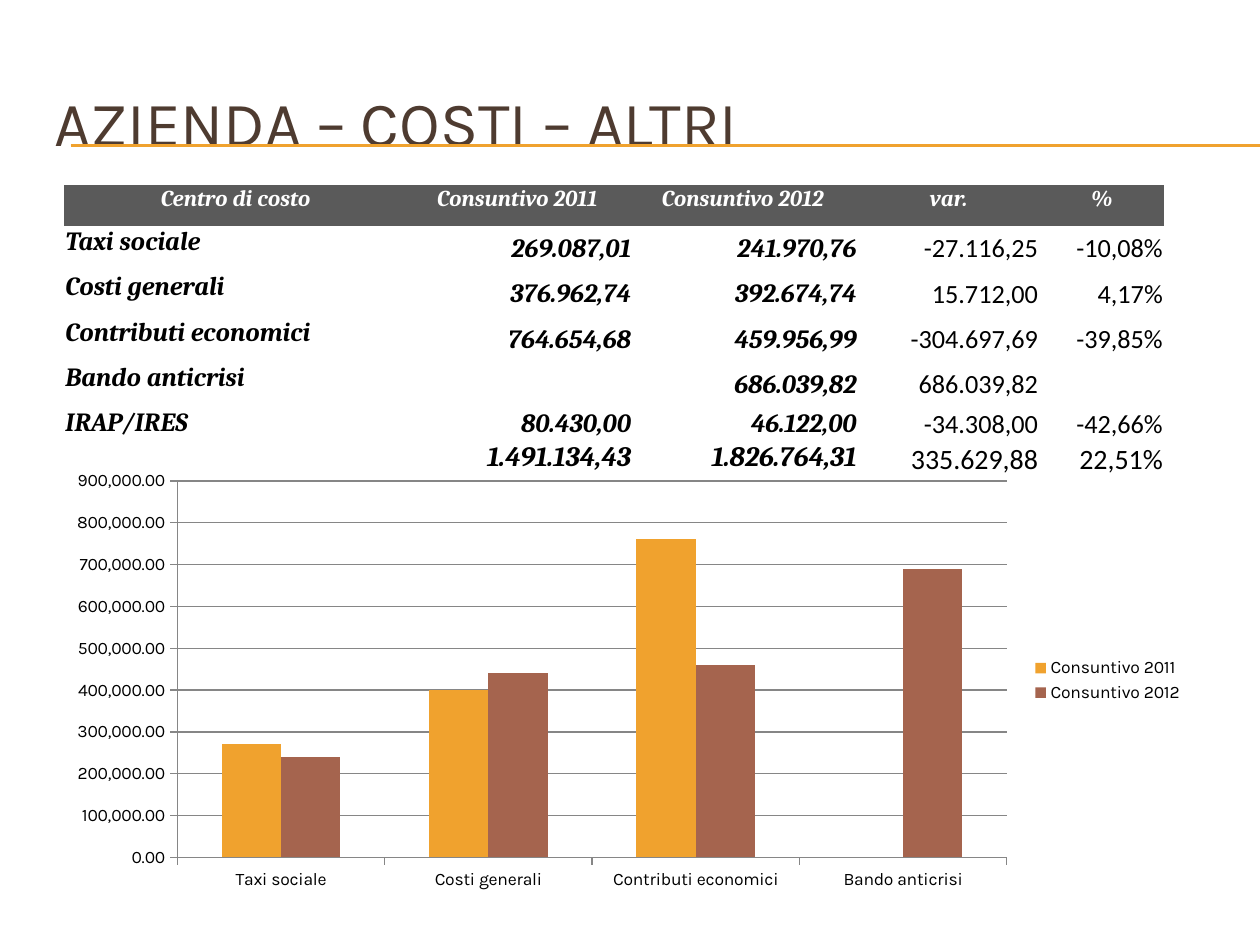
import pptx
import pptx.chart.data
import pptx.dml.color
import pptx.enum.chart
import pptx.enum.text
import pptx.util
from lxml import etree
from pptx.oxml.ns import qn

Inches, Pt = pptx.util.Inches, pptx.util.Pt
ALIGN = pptx.enum.text.PP_ALIGN
ANCHOR = pptx.enum.text.MSO_ANCHOR
ORANGE, RUST, AXIS_GREY = "F0A22E", "A5644E", "868686"

COLUMN_WIDTHS = [2.72, 1.79, 1.79, 1.44, 0.99]
ROW_HEIGHTS = [0.32] + [0.36] * 4 + [0.24, 0.26]
COSTS = [
    ["Centro di costo", "Consuntivo 2011 ", "Consuntivo 2012\u00a0", "var.", "%"],
    ["Taxi sociale", "269.087,01", "241.970,76", "-27.116,25", "-10,08%"],
    ["Costi generali", "376.962,74", "392.674,74", "15.712,00", "4,17%"],
    ["Contributi economici", "764.654,68", "459.956,99", "-304.697,69", "-39,85%"],
    ["Bando anticrisi", "", "686.039,82", "686.039,82", ""],
    ["IRAP/IRES", "80.430,00", "46.122,00", "-34.308,00", "-42,66%"],
    ["", "1.491.134,43", "1.826.764,31", "335.629,88", "22,51%"],
]
CHART_CATEGORIES = ["Taxi sociale", "Costi generali", "Contributi economici", "Bando anticrisi"]
CHART_SERIES = [
    ("Consuntivo 2011", [270000, 400000, 760000, None], ORANGE),
    ("Consuntivo 2012", [240000, 440000, 460000, 690000], RUST),
]


def rgb(value):
    return pptx.dml.color.RGBColor.from_string(value)


def write(frame, text, font="Karla", size=12, color="000000", bold=False, italic=False,
          align=ALIGN.LEFT):
    paragraph = frame.paragraphs[0]
    paragraph.alignment = align
    run = paragraph.add_run()
    run.text = text
    run.font.name, run.font.size = font, Pt(size)
    run.font.bold, run.font.italic = bold, italic
    run.font.color.rgb = rgb(color)


def add_title_rules(slide, left, right, tops):
    for top in tops:
        rule = slide.shapes.add_connector(1, Inches(left), Inches(top), Inches(right), Inches(top))
        rule.line.color.rgb = rgb(ORANGE)
        rule.line.width = Pt(0.75)
        etree.SubElement(rule._element.spPr, qn("a:effectLst"))


def add_title(slide, left, top, width, height):
    title = slide.shapes.title
    title.left, title.top, title.width, title.height = map(Inches, (left, top, width, height))
    title.text_frame.vertical_anchor = ANCHOR.MIDDLE
    write(title.text_frame, "AZIENDA – COSTI – ALTRI", size=36, color="4E3B30")


def cell_format(row, column):
    """Return the text format and the anchor for a place in the cost table."""
    if row == 0:
        return dict(font="Cambria", size=13, color="FFFFFF", bold=True, italic=True,
                    align=ALIGN.CENTER), ANCHOR.TOP
    is_total = row == len(COSTS) - 1
    is_variation = column > 2
    style = dict(font="Calibri" if is_variation else "Cambria", size=16 if is_total else 15,
                 bold=not is_variation, italic=not is_variation,
                 align=ALIGN.RIGHT if column else ALIGN.LEFT)
    if is_total:
        return style, ANCHOR.BOTTOM if is_variation else ANCHOR.TOP
    return style, ANCHOR.MIDDLE if column else ANCHOR.TOP


def add_cost_table(slide, left, top):
    costs = slide.shapes.add_table(
        len(COSTS), len(COLUMN_WIDTHS), Inches(left), Inches(top),
        Inches(sum(COLUMN_WIDTHS)), Inches(sum(ROW_HEIGHTS))).table
    costs.horz_banding = False
    for column, width in zip(costs.columns, COLUMN_WIDTHS):
        column.width = Inches(width)
    for r, (row, height) in enumerate(zip(COSTS, ROW_HEIGHTS)):
        costs.rows[r].height = Inches(height)
        for c, text in enumerate(row):
            cell = costs.cell(r, c)
            cell.margin_left = cell.margin_right = cell.margin_top = Inches(0.01)
            cell.margin_bottom = 0
            style, cell.vertical_anchor = cell_format(r, c)
            write(cell.text_frame, text, **style)
            if r == 0:
                cell.fill.solid()
                cell.fill.fore_color.rgb = rgb("5A5A5A")
            else:
                cell.fill.background()
    # The plain "No Style, No Grid" table style has no borders.
    style_id = costs._tbl.tblPr.find(qn("a:tableStyleId"))
    style_id.text = "{2D5ABB26-0587-4C30-8999-92F81FD0307C}"


def add_cost_chart(slide, left, top, width, height):
    data = pptx.chart.data.CategoryChartData(number_format="#,##0.00")
    data.categories = CHART_CATEGORIES
    for name, values, _ in CHART_SERIES:
        data.add_series(name, values)
    chart = slide.shapes.add_chart(
        pptx.enum.chart.XL_CHART_TYPE.COLUMN_CLUSTERED,
        Inches(left), Inches(top), Inches(width), Inches(height), data).chart
    chart.has_title = False
    chart.font.name, chart.font.size = "Karla", Pt(10)
    chart.font.color.rgb = rgb("000000")
    chart.has_legend = True
    chart.legend.position = pptx.enum.chart.XL_LEGEND_POSITION.RIGHT
    chart.legend.include_in_layout = False

    columns = chart.plots[0]
    columns.gap_width, columns.overlap = 150, 0
    columns.vary_by_categories = False
    for series, (_, _, color) in zip(columns.series, CHART_SERIES):
        series.format.fill.solid()
        series.format.fill.fore_color.rgb = rgb(color)

    amounts = chart.value_axis
    amounts.minimum_scale, amounts.maximum_scale, amounts.major_unit = 0, 900000, 100000
    amounts.tick_labels.number_format = "#,##0.00"
    amounts.tick_labels.number_format_is_linked = False
    amounts.has_major_gridlines = True
    for part in (amounts, chart.category_axis, amounts.major_gridlines):
        part.format.line.color.rgb = rgb(AXIS_GREY)
        part.format.line.width = Pt(0.75)
    for axis in (amounts, chart.category_axis):
        axis.major_tick_mark = pptx.enum.chart.XL_TICK_MARK.OUTSIDE


def main():
    deck = pptx.Presentation()
    deck.slide_width, deck.slide_height = Inches(10), Inches(7.5)
    slide = deck.slides.add_slide(deck.slide_layouts[5])
    add_title_rules(slide, 0.56, 10, (1.15, 1.16))
    add_title(slide, 0.33, 0.5, 9.5, 0.92)
    add_cost_chart(slide, 0.43, 3.67, 9.06, 3.46)
    add_cost_table(slide, 0.51, 1.47)
    deck.save("out.pptx")


if __name__ == "__main__":
    main()
